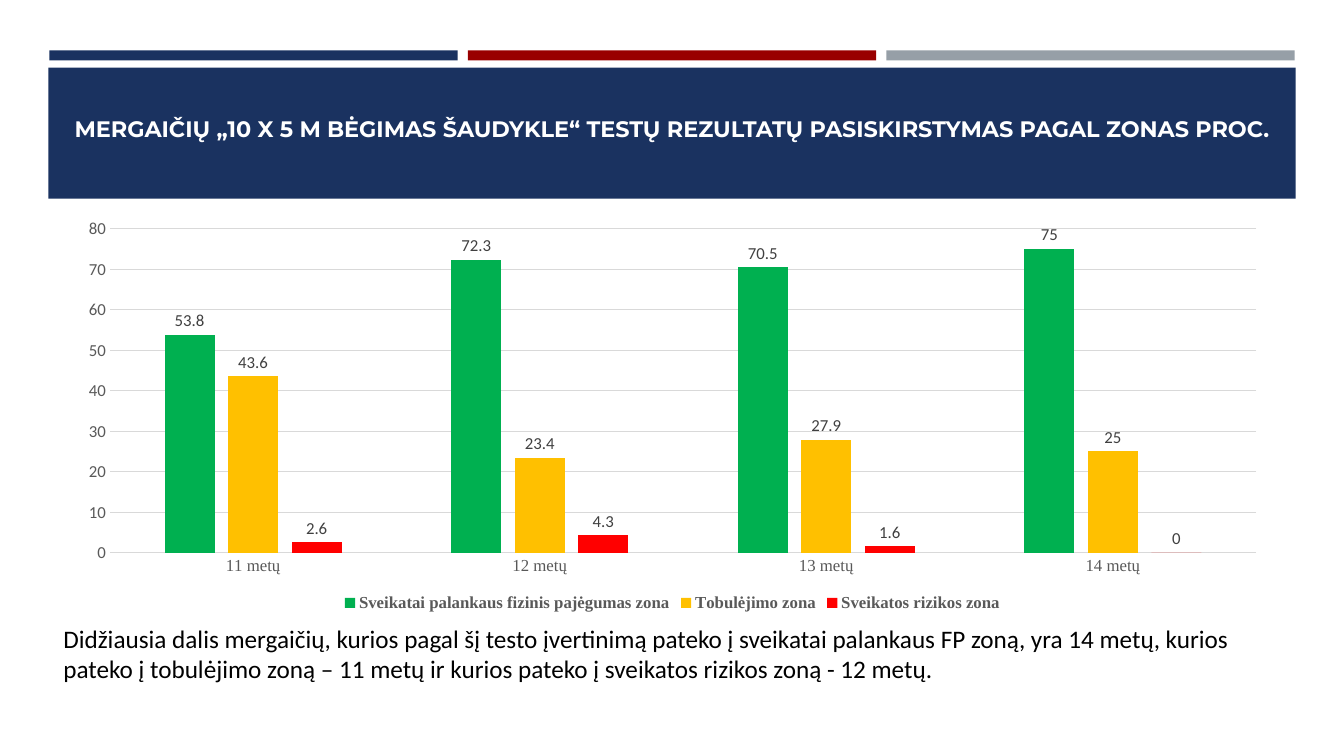
from pptx import Presentation
from pptx.chart.data import CategoryChartData
from pptx.dml.color import RGBColor
from pptx.enum.chart import XL_CHART_TYPE, XL_LABEL_POSITION, XL_LEGEND_POSITION, XL_TICK_MARK
from pptx.enum.shapes import MSO_SHAPE
from pptx.enum.text import MSO_ANCHOR, MSO_AUTO_SIZE, PP_ALIGN
from pptx.util import Inches, Pt

NAVY, RED, GREY = "1A3260", "990000", "969FA7"


def style(font, name, size, color, bold=False):
    font.name, font.size, font.bold = name, Pt(size), bold
    font.color.rgb = RGBColor.from_string(color)


def add_bar(s, x, y, w, h, color):
    bar = s.shapes.add_shape(MSO_SHAPE.RECTANGLE, Inches(x), Inches(y), Inches(w), Inches(h))
    bar.shadow.inherit = False
    bar.fill.solid()
    bar.fill.fore_color.rgb = RGBColor.from_string(color)
    bar.line.fill.background()


prs = Presentation()
prs.slide_width, prs.slide_height = Inches(13.33), Inches(7.5)
s = prs.slides.add_slide(prs.slide_layouts[5])
title = s.shapes.title

# Three colour strips above the title band
strip_w, strip_gap = 4.05, 0.1
for i, color in enumerate([NAVY, RED, GREY]):
    add_bar(s, 0.49 + i * (strip_w + strip_gap), 0.5, strip_w, 0.1, color)
add_bar(s, 0.48, 0.67, 12.37, 1.3, NAVY)

# Title, brought in front of the band
s.shapes._spTree.append(title._element)
title.left, title.top, title.width, title.height = Inches(0.64), Inches(0.61), Inches(12.06), Inches(1.11)
tf = title.text_frame
tf.text = "MERGAIČIŲ „10 X 5 M BĖGIMAS ŠAUDYKLE“ TESTŲ REZULTATŲ PASISKIRSTYMAS PAGAL ZONAS PROC."
tf.word_wrap = True
tf.auto_size = MSO_AUTO_SIZE.NONE
tf.vertical_anchor = MSO_ANCHOR.BOTTOM
tf.margin_bottom, tf.margin_right = Inches(0.31), 0
tf.paragraphs[0].alignment = PP_ALIGN.LEFT
style(tf.paragraphs[0].runs[0].font, "Montserrat", 16, "FFFFFF", True)

# Chart data
zones = [
    ("Sveikatai palankaus fizinis pajėgumas zona", (53.8, 72.3, 70.5, 75), "00B050"),
    ("Tobulėjimo zona", (43.6, 23.4, 27.9, 25), "FFC000"),
    ("Sveikatos rizikos zona", (2.6, 4.3, 1.6, 0), "FF0000"),
]
data = CategoryChartData()
data.categories = ["11 metų", "12 metų", "13 metų", "14 metų"]
for name, values, color in zones:
    data.add_series(name, values)
chart = s.shapes.add_chart(XL_CHART_TYPE.COLUMN_CLUSTERED, Inches(0.64), Inches(2.09),
                           Inches(12.06), Inches(4.02), data).chart
chart.has_title = False
style(chart.font, "Calibri", 10, "000000")

# Columns and their labels
plot = chart.plots[0]
plot.gap_width, plot.overlap, plot.vary_by_categories = 219, -27, False
for series, (name, values, color) in zip(plot.series, zones):
    series.format.fill.solid()
    series.format.fill.fore_color.rgb = RGBColor.from_string(color)
    labels = series.data_labels
    labels.show_value = True
    labels.position = XL_LABEL_POSITION.OUTSIDE_END
    style(labels.font, "Calibri", 12, "404040")

# Axes
cat_axis, val_axis = chart.category_axis, chart.value_axis
for axis, font_name in [(cat_axis, "Times New Roman"), (val_axis, "Calibri")]:
    axis.major_tick_mark = axis.minor_tick_mark = XL_TICK_MARK.NONE
    style(axis.tick_labels.font, font_name, 12, "595959")
val_axis.minimum_scale, val_axis.maximum_scale, val_axis.major_unit = 0, 80, 10
val_axis.format.line.fill.background()
for line in [cat_axis.format.line, val_axis.major_gridlines.format.line]:
    line.color.rgb = RGBColor.from_string("D9D9D9")
    line.width = Pt(0.75)

# Legend
chart.has_legend = True
chart.legend.position = XL_LEGEND_POSITION.BOTTOM
chart.legend.include_in_layout = False
style(chart.legend.font, "Times New Roman", 12, "595959", True)

# Conclusion
tf = s.shapes.add_textbox(Inches(0.53), Inches(5.93), Inches(12.06), Inches(1.47)).text_frame
tf.word_wrap = True
tf.vertical_anchor = MSO_ANCHOR.MIDDLE
tf.margin_bottom = Inches(0.42)
tf.text = ("Didžiausia dalis mergaičių, kurios pagal šį testo įvertinimą pateko į sveikatai palankaus "
           "FP zoną, yra 14 metų, kurios pateko į tobulėjimo zoną – 11 metų ir kurios pateko į "
           "sveikatos rizikos zoną - 12 metų.")
style(tf.paragraphs[0].runs[0].font, "Calibri", 18, "000000")

prs.save("out.pptx")
